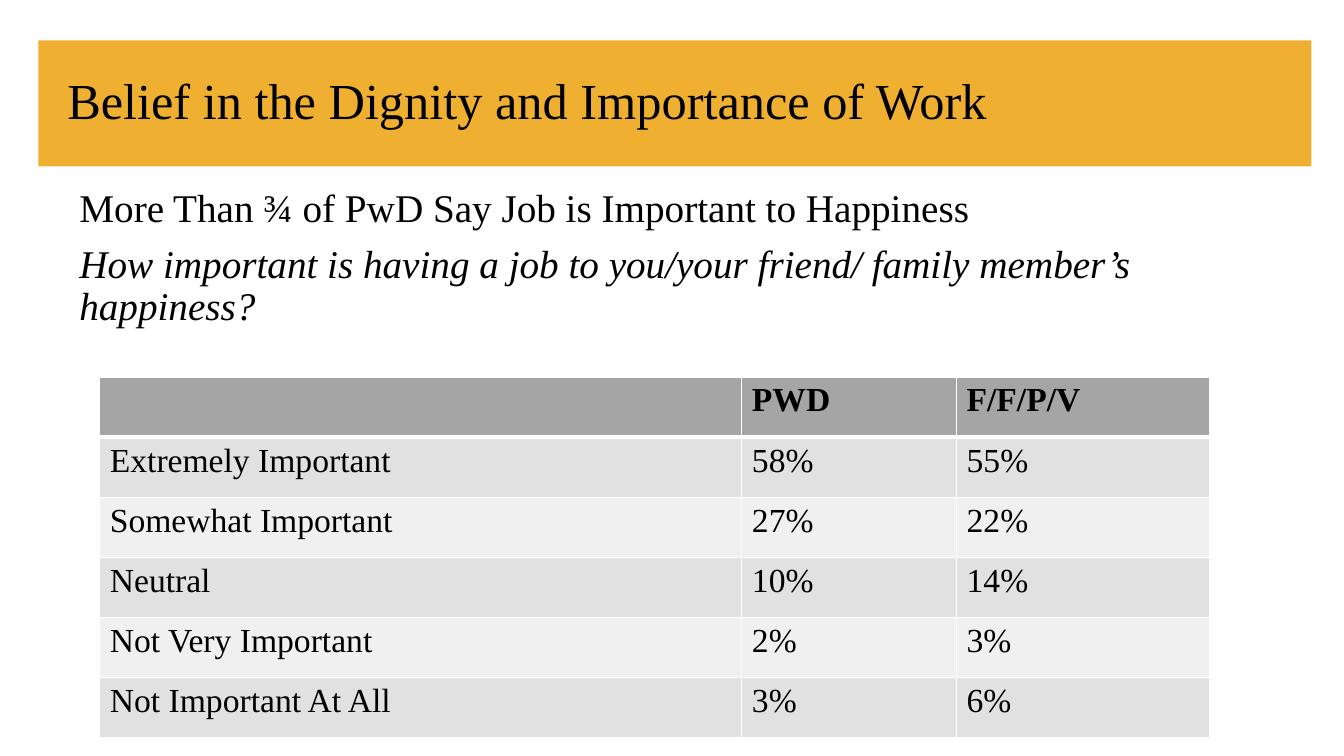
from dataclasses import dataclass

from lxml import etree
from pptx import Presentation
from pptx.dml.color import RGBColor
from pptx.enum.shapes import MSO_SHAPE
from pptx.enum.text import MSO_ANCHOR
from pptx.oxml.ns import qn
from pptx.slide import Slide
from pptx.table import _Cell
from pptx.util import Pt

RECTANGLE = MSO_SHAPE.RECTANGLE
TOP, MIDDLE = MSO_ANCHOR.TOP, MSO_ANCHOR.MIDDLE

BLACK = RGBColor(0x00, 0x00, 0x00)
WHITE = RGBColor(0xFF, 0xFF, 0xFF)
GOLD = RGBColor(0xEF, 0xAF, 0x30)
HEADER_GRAY = RGBColor(0xA5, 0xA5, 0xA5)
BAND_GRAYS = (RGBColor(0xE1, 0xE1, 0xE1), RGBColor(0xF0, 0xF0, 0xF0))

FONT_NAME = "Times New Roman"
COLUMN_WIDTHS = (458.64, 153.36, 180.72)
ROW_HEIGHT = 43
TABLE_ROWS = (
    ("", "PWD", "F/F/P/V"),
    ("Extremely Important", "58%", "55%"),
    ("Somewhat Important", "27%", "22%"),
    ("Neutral", "10%", "14%"),
    ("Not Very Important", "2%", "3%"),
    ("Not Important At All", "3%", "6%"),
)


@dataclass(frozen=True)
class Line:
    text: str
    size: float
    italic: bool = False


@dataclass(frozen=True)
class TextBlock:
    left: float
    top: float
    width: float
    height: float
    anchor: MSO_ANCHOR
    lines: tuple[Line, ...]
    indent: float = 0


TEXT_BLOCKS = (
    TextBlock(41, 28.8, 828, 90, MIDDLE,
              (Line("Belief in the Dignity and Importance of Work", 36),)),
    TextBlock(41, 131, 852.5, 125.3, TOP, (
        Line("More Than ¾ of PwD Say Job is Important to Happiness", 28),
        Line("How important is having a job to you/your friend/ family member’s happiness?",
             28, italic=True),
    ), indent=8.64),
)


def format_font(font, **values) -> None:
    for name, value in ({"name": FONT_NAME} | values).items():
        setattr(font, name, value)
    font.color.rgb = BLACK


def add_banner(slide: Slide) -> None:
    banner = slide.shapes.add_shape(RECTANGLE, Pt(27.4), Pt(28.8), Pt(909.4), Pt(90))
    banner.shadow.inherit = False
    banner.fill.solid()
    banner.fill.fore_color.rgb = GOLD
    banner.line.fill.background()


def add_text_block(slide: Slide, block: TextBlock) -> None:
    box = slide.shapes.add_textbox(
        Pt(block.left), Pt(block.top), Pt(block.width), Pt(block.height))
    frame = box.text_frame
    frame.word_wrap = True
    frame.vertical_anchor = block.anchor
    for index, line in enumerate(block.lines):
        paragraph = frame.add_paragraph() if index else frame.paragraphs[0]
        paragraph.line_spacing = 0.9
        paragraph.space_before = Pt(10 if index else 0)
        if block.indent:
            properties = paragraph._p.get_or_add_pPr()
            properties.set("marL", str(int(Pt(block.indent))))
            properties.set("indent", "0")
        run = paragraph.add_run()
        run.text = line.text
        format_font(run.font, size=Pt(line.size), italic=line.italic)


def add_borders(cell: _Cell, widths: dict[str, float]) -> None:
    properties = cell._tc.get_or_add_tcPr()
    for side, width in widths.items():
        border = etree.SubElement(properties, qn(f"a:ln{side}"), w=str(int(Pt(width))))
        fill = etree.SubElement(border, qn("a:solidFill"))
        etree.SubElement(fill, qn("a:srgbClr"), val=str(WHITE))


def add_results_table(slide: Slide) -> None:
    row_count = len(TABLE_ROWS)
    table = slide.shapes.add_table(
        row_count, len(COLUMN_WIDTHS), Pt(71.3), Pt(269.3),
        Pt(sum(COLUMN_WIDTHS)), Pt(ROW_HEIGHT * row_count)).table
    for column, width in zip(table.columns, COLUMN_WIDTHS):
        column.width = Pt(width)
    for row_index, texts in enumerate(TABLE_ROWS):
        table.rows[row_index].height = Pt(ROW_HEIGHT)
        is_header = row_index == 0
        color = HEADER_GRAY if is_header else BAND_GRAYS[(row_index - 1) % 2]
        # The rule below the header is heavier than the other borders
        widths = {"L": 1, "R": 1, "T": 3 if row_index == 1 else 1,
                  "B": 3 if is_header else 1}
        for column_index, text in enumerate(texts):
            cell = table.cell(row_index, column_index)
            add_borders(cell, widths)
            cell.fill.solid()
            cell.fill.fore_color.rgb = color
            if text:
                run = cell.text_frame.paragraphs[0].add_run()
                run.text = text
                format_font(run.font, size=Pt(24), bold=is_header)


def main() -> None:
    presentation = Presentation()
    presentation.slide_width, presentation.slide_height = Pt(960), Pt(540)
    slide = presentation.slides.add_slide(presentation.slide_layouts[6])

    # Title banner and text
    add_banner(slide)
    for block in TEXT_BLOCKS:
        add_text_block(slide, block)

    # Survey results
    add_results_table(slide)
    presentation.save("out.pptx")


if __name__ == "__main__":
    main()
